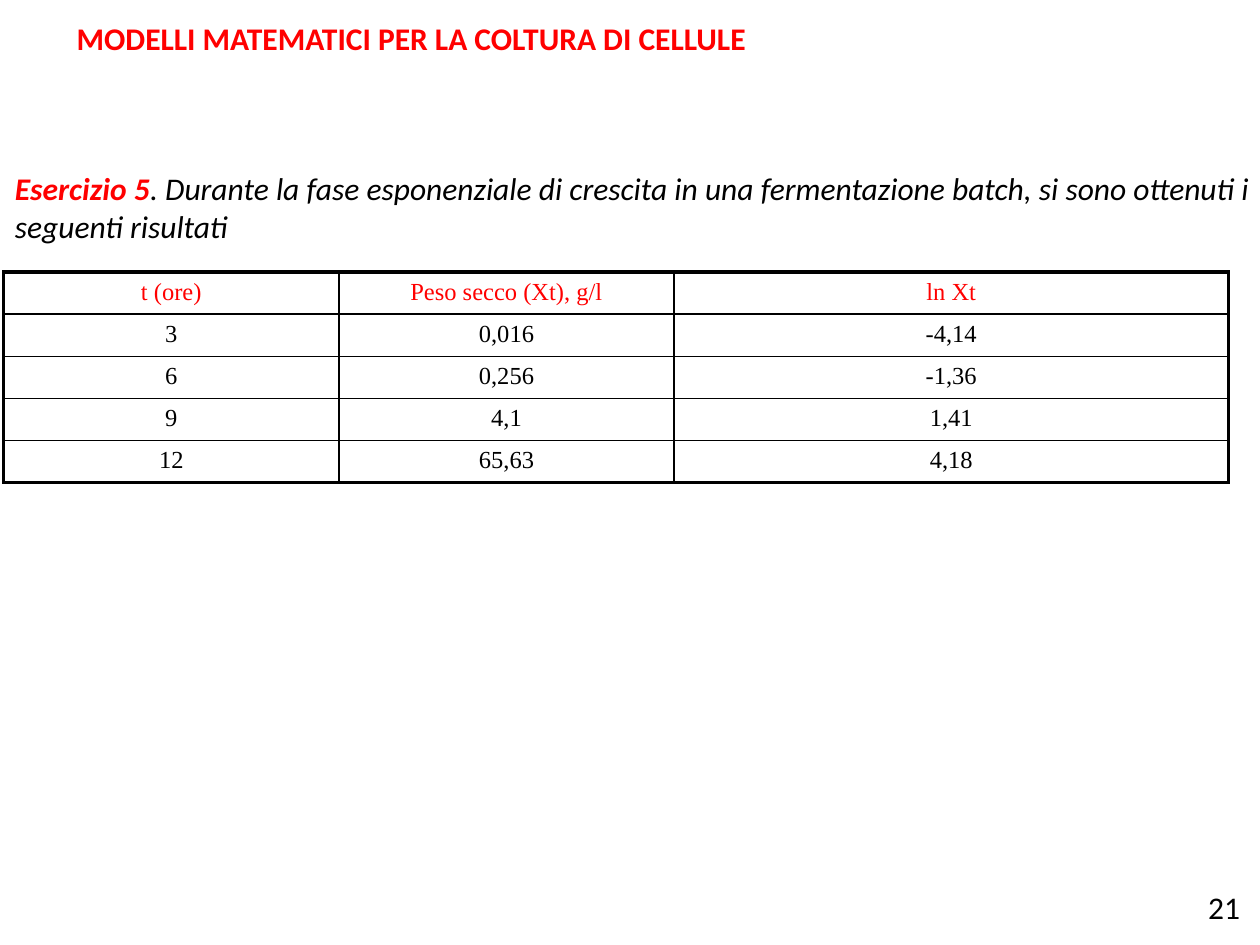
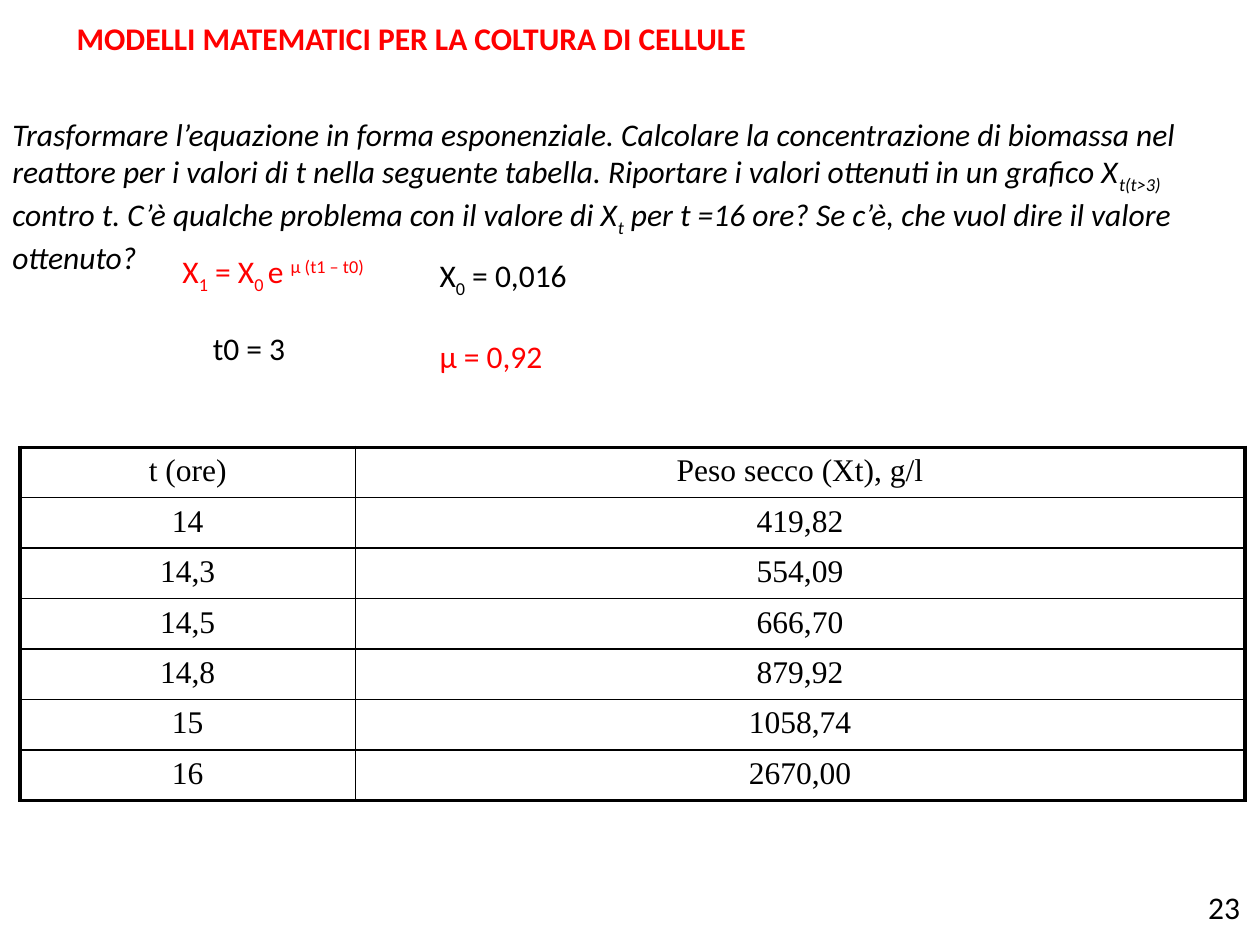
from dataclasses import dataclass

from lxml import etree
from pptx import Presentation
from pptx import util as u
from pptx.dml.color import RGBColor
from pptx.enum import text
from pptx.oxml.ns import qn


@dataclass(frozen=True)
class Theme:
    red: RGBColor = RGBColor(0xFF, 0, 0)
    black: RGBColor = RGBColor(0, 0, 0)
    body_font: str = "Calibri"
    table_font: str = "Times New Roman"
    body: int = 18
    small: int = 14
    thin: float = 1
    thick: float = 2.25


T = Theme()
SUB, SUP = -25, 30  # baseline shift, percent


def add_text(s, box, paragraphs, color=T.black, bold=False, italic=False, wrap=True):
    """Each paragraph is a list of (text, overrides) runs."""
    sp = s.shapes.add_textbox(*[u.Inches(v) for v in box])
    tf = sp.text_frame
    tf.word_wrap = wrap
    tf.auto_size = text.MSO_AUTO_SIZE.SHAPE_TO_FIT_TEXT
    for i, runs in enumerate(paragraphs):
        p = tf.add_paragraph() if i else tf.paragraphs[0]
        for content, look in runs:
            r = p.add_run()
            r.text = content
            r.font.name, r.font.size = T.body_font, u.Pt(T.body)
            r.font.color.rgb = look.get("color", color)
            r.font.bold = look.get("bold", bold)
            r.font.italic = italic
            if "shift" in look:
                r._r.get_or_add_rPr().set("baseline", str(look["shift"] * 1000))
    return sp


def add_grid(s, left, top, widths, row_height, rows, size, head_color):
    """Table with thin inner lines and a thick outer frame."""
    n_rows, n_cols = len(rows), len(widths)
    frame = s.shapes.add_table(n_rows, n_cols, u.Inches(left), u.Inches(top),
                               u.Inches(sum(widths)), u.Inches(row_height * n_rows))
    table = frame.table
    table.first_row = table.horz_banding = False
    for column, width in zip(table.columns, widths):
        column.width = u.Inches(width)
    for i, values in enumerate(rows):
        table.rows[i].height = u.Inches(row_height)
        for j, value in enumerate(values):
            cell = table.cell(i, j)
            p = cell.text_frame.paragraphs[0]
            p.text = value
            p.alignment = text.PP_ALIGN.CENTER
            font = p.runs[0].font
            font.name, font.size = T.table_font, u.Pt(size)
            font.color.rgb = T.black if i else head_color
            # Borders come before the fill in the cell properties
            tc_pr = cell._tc.get_or_add_tcPr()
            outer = {"lnL": j == 0, "lnR": j == n_cols - 1,
                     "lnT": i == 0, "lnB": i == n_rows - 1}
            for side, is_outer in outer.items():
                width = u.Pt(T.thick if is_outer else T.thin)
                ln = etree.SubElement(tc_pr, qn(f"a:{side}"), w=str(int(width)))
                fill = etree.SubElement(ln, qn("a:solidFill"))
                etree.SubElement(fill, qn("a:srgbClr"), val=str(T.black))
            cell.fill.background()


prs = Presentation()
prs.slide_width, prs.slide_height = u.Inches(10), u.Inches(7.5)

# Shared title and page number
slides = []
for number in ("21", "23"):
    s = prs.slides.add_slide(prs.slide_layouts[6])
    add_text(s, (0.51, 0.1, 5.57, 0.4),
             [[("MODELLI MATEMATICI PER LA COLTURA DI CELLULE", {})]],
             color=T.red, bold=True, wrap=False)
    add_text(s, (9.49, 7, 0.46, 0.4), [[(number, {})]], wrap=False)
    slides.append(s)
exercise, exponential = slides

# Exercise 5: statement and measured data
statement = add_text(exercise, (0.02, 1.29, 10, 0.71), [[
    ("Esercizio 5", {"color": T.red, "bold": True}),
    (". Durante la fase esponenziale di crescita in una fermentazione batch, "
     "si sono ottenuti i seguenti risultati", {}),
]], italic=True)
statement.text_frame.paragraphs[0].alignment = text.PP_ALIGN.JUSTIFY

add_grid(exercise, 0.03, 2.16, (2.66, 2.66, 4.4), 1.67 / 5, [
    ("t (ore)", "Peso secco (Xt), g/l", "ln Xt"),
    ("3", "0,016", "-4,14"),
    ("6", "0,256", "-1,36"),
    ("9", "4,1", "1,41"),
    ("12", "65,63", "4,18"),
], T.small, T.red)

# Exponential form: computed biomass
add_grid(exponential, 0.16, 3.55, (2.66, 7.06), 0.4, [
    ("t (ore)", "Peso secco (Xt), g/l"),
    ("14", "419,82"),
    ("14,3", "554,09"),
    ("14,5", "666,70"),
    ("14,8", "879,92"),
    ("15", "1058,74"),
    ("16", "2670,00"),
], T.body, T.black)

add_text(exponential, (0, 0.86, 10, 1.31), [[
    ("Trasformare l’equazione in forma esponenziale. Calcolare la concentrazione "
     "di biomassa nel reattore per i valori di t nella seguente tabella. "
     "Riportare i valori ottenuti in un grafico X", {}),
    ("t(t>3)", {"shift": SUB}),
    (" contro t. C’è qualche problema con il valore di X", {}),
    ("t", {"shift": SUB}),
    (" per t =16 ore? Se c’è, che vuol dire il valore ottenuto?", {}),
]], italic=True)

# Equation and its parameters
add_text(exponential, (1.35, 1.95, 2.04, 0.4), [[
    ("X", {}), ("1", {"shift": SUB}), (" = X", {}), ("0 ", {"shift": SUB}),
    ("e ", {}), ("μ (t1 – t0)", {"shift": SUP}),
]], color=T.red)
parameters = add_text(exponential, (3.39, 1.98, 1.24, 1.31), [
    [("X", {}), ("0", {"shift": SUB}), (" = 0,016", {})],
    [("μ = 0,92", {"color": T.red})],
], wrap=False)
parameters.text_frame.paragraphs[1].space_before = u.Pt(22)
add_text(exponential, (1.59, 2.56, 0.78, 0.4), [[("t0 = 3", {})]], wrap=False)

prs.save("out.pptx")
